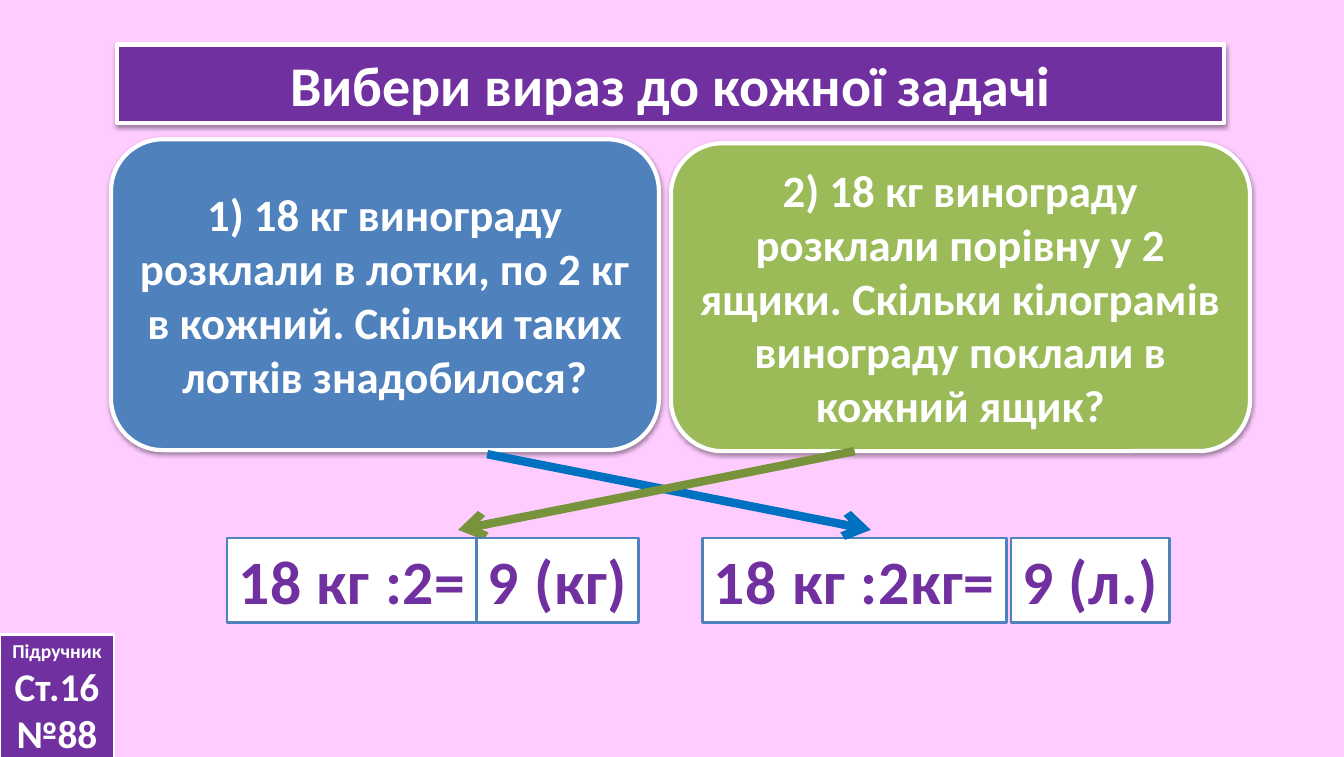
from lxml.etree import SubElement
from pptx import Presentation
from pptx.dml.color import RGBColor
from pptx.enum.shapes import MSO_CONNECTOR, MSO_SHAPE
from pptx.enum.text import MSO_ANCHOR, MSO_AUTO_SIZE, PP_ALIGN
from pptx.oxml.ns import qn
from pptx.util import Inches, Pt

WIDE, HIGH = Inches(13.32), Inches(7.5)
WHITE, PURPLE, BLUE, GREEN = "FFFFFF", "7030A0", "4F81BD", "9BBB59"
MIDDLE = {"vertical_anchor": MSO_ANCHOR.MIDDLE, "word_wrap": True}
SNUG = {"vertical_anchor": MSO_ANCHOR.TOP, "word_wrap": False,
        "auto_size": MSO_AUTO_SIZE.SHAPE_TO_FIT_TEXT}


def color(code):
    return RGBColor.from_string(code)


def across(share):
    """Turn a percentage of the slide's width into a length."""
    return round(WIDE * share / 100)


def down(share):
    """Turn a percentage of the slide's height into a length."""
    return round(HIGH * share / 100)


def apply(target, values):
    for name, value in values.items():
        setattr(target, name, value)


def paint(line, code, width):
    line.color.rgb = color(code)
    line.width = Pt(width)


def shade(shape):
    """Drop a soft shadow straight below the shape."""
    effects = shape._element.spPr.find(qn("a:effectLst"))
    outer = SubElement(effects, qn("a:outerShdw"), blurRad="40000",
                       dist="20000", dir="5400000", rotWithShape="0")
    black = SubElement(outer, qn("a:srgbClr"), val="000000")
    SubElement(black, qn("a:alpha"), val="38000")


def box(slide, kind, area, fill, edge, width, frame):
    left, top, wide, high = area
    shape = slide.shapes.add_shape(
        kind, across(left), down(top), across(wide), down(high))
    shape.shadow.inherit = False
    shape.fill.solid()
    shape.fill.fore_color.rgb = color(fill)
    paint(shape.line, edge, width)
    apply(shape.text_frame, frame)
    return shape


def write(para, text, size, ink=WHITE):
    para.alignment = PP_ALIGN.CENTER
    run = para.add_run()
    run.text = text
    apply(run.font, {"name": "Calibri", "size": Pt(size), "bold": True})
    run.font.color.rgb = color(ink)
    return run


def panel(slide, kind, area, fill, text, size):
    """Add a shadowed block with white text."""
    shape = box(slide, kind, area, fill, WHITE, 3, MIDDLE)
    shade(shape)
    write(shape.text_frame.paragraphs[0], text, size)


def answer(slide, left, wide, text):
    area = left, 71.07, wide, 11.2
    shape = box(slide, MSO_SHAPE.RECTANGLE, area, WHITE, BLUE, 2, SNUG)
    run = write(shape.text_frame.paragraphs[0], text, 44, PURPLE)
    run._r.get_or_add_rPr().set("spc", "50")


def arrow(slide, start, end, code):
    (x1, y1), (x2, y2) = start, end
    link = slide.shapes.add_connector(
        MSO_CONNECTOR.STRAIGHT, across(x1), down(y1), across(x2), down(y2))
    paint(link.line, code, 6)
    SubElement(link.line._get_or_add_ln(), qn("a:tailEnd"), type="arrow")
    SubElement(link._element.spPr, qn("a:effectLst"))


def badge(slide):
    """Add the textbook page and task number in the corner."""
    shape = box(slide, MSO_SHAPE.RECTANGLE, (0, 83.87, 8.48, 16.53),
                PURPLE, WHITE, 2, MIDDLE)
    frame = shape.text_frame
    write(frame.paragraphs[0], "Підручник", 14)
    write(frame.add_paragraph(), "Ст.16 №88", 28)


def main():
    deck = Presentation()
    apply(deck, {"slide_width": WIDE, "slide_height": HIGH})
    slide = deck.slides.add_slide(deck.slide_layouts[6])
    slide.background.fill.solid()
    slide.background.fill.fore_color.rgb = color("FFCCFF")

    panel(slide, MSO_SHAPE.RECTANGLE, (8.71, 5.87, 82.36, 10.4), PURPLE,
          "Вибери вираз до кожної задачі", 40)
    tasks = [
        ((49.92, 18.93, 43.09, 40.67), GREEN,
         "2) 18 кг винограду розклали порівну у 2 ящики. "
         "Скільки кілограмів винограду поклали в кожний ящик?"),
        ((8.26, 18.4, 40.77, 41.07), BLUE,
         "1) 18 кг винограду розклали в лотки, по 2 кг в кожний. "
         "Скільки таких лотків знадобилося?"),
    ]
    for area, fill, text in tasks:
        panel(slide, MSO_SHAPE.ROUNDED_RECTANGLE, area, fill, text, 32)

    answer(slide, 16.89, 18.62, "18 кг :2=")
    answer(slide, 52.25, 22.67, "18 кг :2кг=")
    arrow(slide, (36.26, 60), (64.79, 70), "0070C0")
    arrow(slide, (63.59, 59.6), (34.08, 70), "77933C")
    badge(slide)
    answer(slide, 75.23, 11.79, "9 (л.)")
    answer(slide, 35.44, 12.09, "9 (кг)")
    deck.save("out.pptx")


if __name__ == "__main__":
    main()
